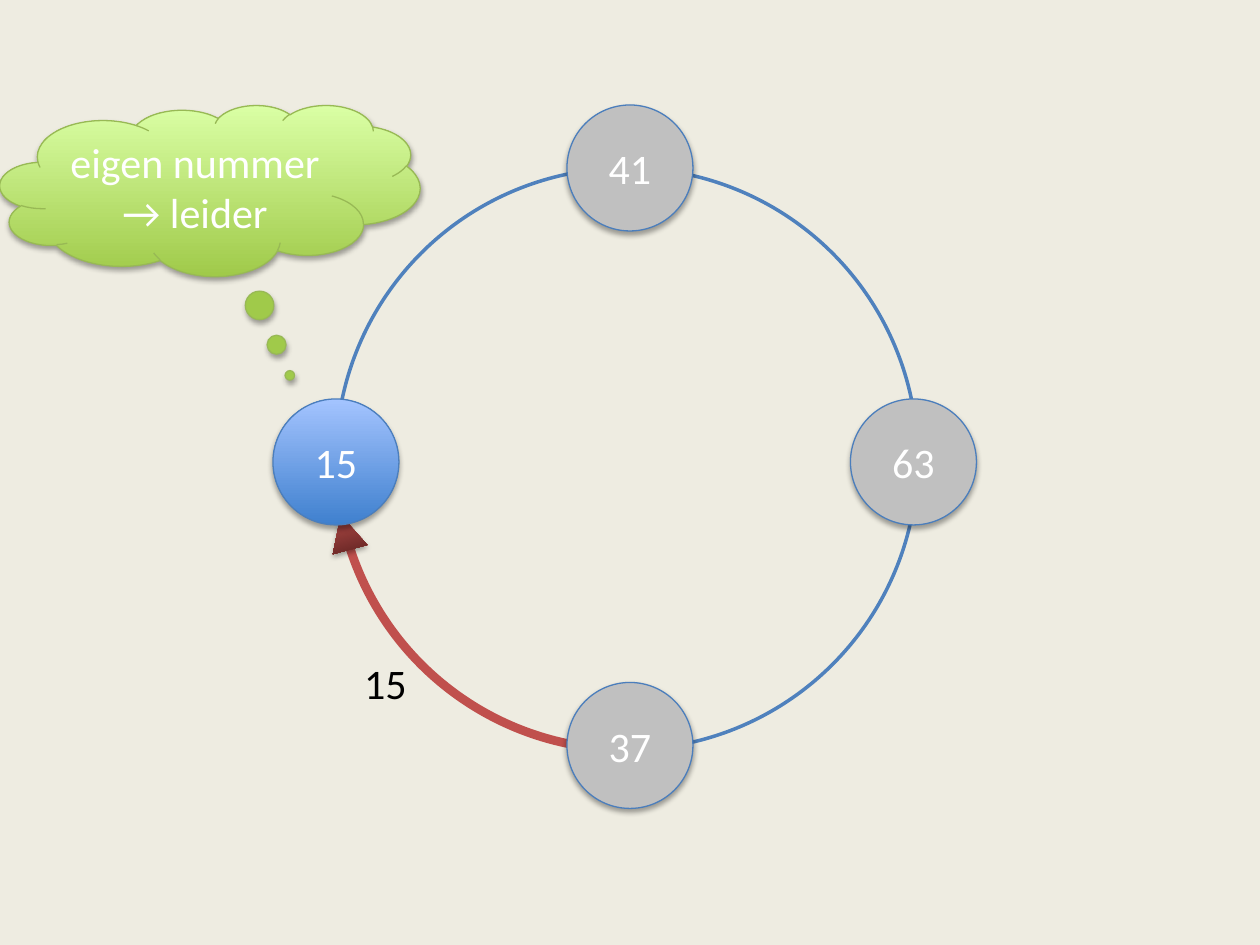
from dataclasses import dataclass

from lxml.etree import SubElement
from pptx import Presentation
from pptx.dml.color import RGBColor
from pptx.enum.shapes import MSO_SHAPE
from pptx.enum.text import MSO_ANCHOR, PP_ALIGN
from pptx.oxml.ns import qn
from pptx.util import Inches, Pt

COLUMNS, ROWS = 120, 90
CELL = Inches(10) / COLUMNS
NODE_SIZE = 12


@dataclass(frozen=True)
class Theme:
    background: str = "EEECE1"
    ring: str = "4F81BD"
    node_line: str = "4B7EBC"
    passive: str = "C0C0C0"
    active: tuple = ("3F80CE", "A4C4FF")
    thought: tuple = ("A0CA4A", "DAFFA5")
    thought_line: str = "98B955"
    message: str = "C0504D"
    arrowhead: tuple = ("C0504D", "632523")
    light_text: str = "FFFFFF"
    dark_text: str = "000000"
    font: str = "Calibri"
    text_size: int = 24
    hairline: float = 0.75
    ring_width: int = 2
    message_width: int = 5


THEME = Theme()


@dataclass(frozen=True)
class Box:
    """An area measured in grid cells."""
    left: float
    top: float
    width: float
    height: float

    def inner(self, left, top, width, height):
        return Box(self.left + left, self.top + top, width, height)

    def lengths(self):
        return [round(cells * CELL) for cells in
                (self.left, self.top, self.width, self.height)]


def add_shadow(shape):
    effects = SubElement(shape._element.spPr, qn("a:effectLst"))
    shadow = SubElement(effects, qn("a:outerShdw"), blurRad=str(Pt(3.1)),
                        dist=str(Pt(1.8)), dir="5400000", rotWithShape="0")
    color = SubElement(shadow, qn("a:srgbClr"), val="000000")
    SubElement(color, qn("a:alpha"), val="35000")


def paint(shape, fill=None, angle=90, line=None, width=THEME.hairline):
    """Fill with one colour, a pair as a gradient, or nothing."""
    if fill is None:
        shape.fill.background()
    elif isinstance(fill, str):
        shape.fill.solid()
        shape.fill.fore_color.rgb = RGBColor.from_string(fill)
    else:
        shape.fill.gradient()
        shape.fill.gradient_angle = angle
        for position, (stop, color) in enumerate(zip(shape.fill.gradient_stops, fill)):
            stop.position = position
            stop.color.rgb = RGBColor.from_string(color)
    if line is None:
        shape.line.fill.background()
    else:
        shape.line.color.rgb = RGBColor.from_string(line)
        shape.line.width = Pt(width)


def add_figure(shapes, kind, box, shadow=True, **style):
    figure = shapes.add_shape(kind, *box.lengths())
    paint(figure, **style)
    if shadow:
        add_shadow(figure)
    else:
        figure.shadow.inherit = False
    return figure


def write(shape, text, color, align=PP_ALIGN.CENTER):
    paragraph = shape.text_frame.paragraphs[0]
    paragraph.text = text
    paragraph.alignment = align
    paragraph.font.name = THEME.font
    paragraph.font.size = Pt(THEME.text_size)
    paragraph.font.color.rgb = RGBColor.from_string(color)


def add_message(shapes, ring, number):
    """The number travelling along the lower left quarter of the ring."""
    message = shapes.add_group_shape().shapes
    label = message.add_textbox(*ring.inner(1.5, 46, 6.5, 6).lengths())
    label.text_frame.word_wrap = False
    write(label, number, THEME.dark_text, PP_ALIGN.LEFT)

    route = add_figure(message, MSO_SHAPE.ARC, ring, shadow=False,
                       line=THEME.message, width=THEME.message_width)
    for index, degrees in enumerate((90.5, 179.7)):
        route.adjustments[index] = degrees * 60000 / 100000

    arrowhead = add_figure(message, MSO_SHAPE.ISOSCELES_TRIANGLE,
                           ring.inner(-0.8, 33, 3.4, 3.4),
                           fill=THEME.arrowhead, angle=270)
    arrowhead.rotation = 345


def add_node(shapes, box, number, fill):
    node = add_figure(shapes, MSO_SHAPE.OVAL, box, fill=fill, line=THEME.node_line)
    node.text_frame.vertical_anchor = MSO_ANCHOR.MIDDLE
    write(node, number, THEME.light_text)


def add_ring(shapes, ring):
    add_figure(shapes, MSO_SHAPE.OVAL, ring, shadow=False,
               line=THEME.ring, width=THEME.ring_width)
    add_message(shapes, ring, "15")
    near, middle, far = -6, 22, 49
    for number, left, top, fill in (
        ("15", near, middle, THEME.active),
        ("41", middle, near, THEME.passive),
        ("63", far, middle, THEME.passive),
        ("37", middle, far, THEME.passive),
    ):
        add_node(shapes, ring.inner(left, top, NODE_SIZE, NODE_SIZE), number, fill)


def add_thought(shapes, box, text):
    cloud = add_figure(shapes, MSO_SHAPE.CLOUD_CALLOUT, box,
                       fill=THEME.thought, line=THEME.thought_line)
    cloud.adjustments[0] = 0.19
    cloud.adjustments[1] = 1.08
    cloud.text_frame.vertical_anchor = MSO_ANCHOR.MIDDLE
    write(cloud, text, THEME.light_text)


def main():
    presentation = Presentation()
    presentation.slide_width = round(COLUMNS * CELL)
    presentation.slide_height = round(ROWS * CELL)
    slide = presentation.slides.add_slide(presentation.slide_layouts[6])
    slide.background.fill.solid()
    slide.background.fill.fore_color.rgb = RGBColor.from_string(THEME.background)

    add_ring(slide.shapes, Box(32, 16, 55.4, 55.4))
    add_thought(slide.shapes, Box(0, 10, 40, 16.3), "eigen nummer → leider")
    presentation.save("out.pptx")


if __name__ == "__main__":
    main()
